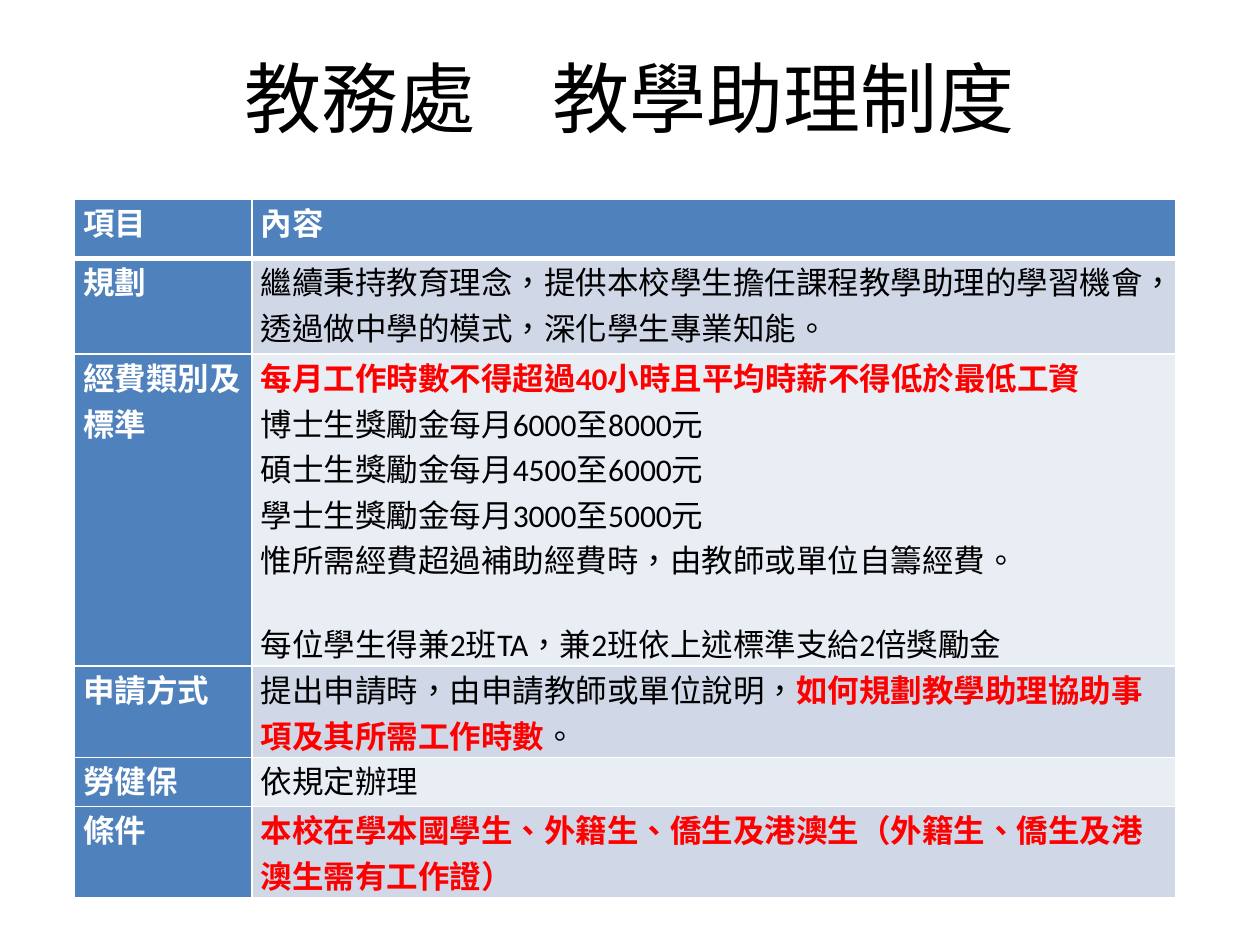
from lxml.etree import SubElement
from pptx import Presentation
from pptx.dml.color import RGBColor
from pptx.enum.lang import MSO_LANGUAGE_ID as Language
from pptx.enum.text import MSO_ANCHOR as Anchor, PP_ALIGN as Align
from pptx.oxml import parse_xml
from pptx.oxml.ns import nsdecls, qn
from pptx.util import Inches, Pt

BLACK = RGBColor(0x00, 0x00, 0x00)
WHITE = RGBColor(0xFF, 0xFF, 0xFF)
RED = RGBColor(0xFF, 0x00, 0x00)
BLUE = RGBColor(0x4F, 0x81, 0xBD)
BANDS = (RGBColor(0xE9, 0xED, 0xF4), RGBColor(0xD0, 0xD8, 0xE8))

# Paragraphs are lists of (text, is_key_point) runs
HEADER = ("項目", "內容")
ROWS = [
    ("規劃", [[("繼續秉持教育理念，提供本校學生擔任課程教學助理的學習機會，"
               "透過做中學的模式，深化學生專業知能。", False)]]),
    ("經費類別及標準", [
        [("每月工作時數不得超過40小時且平均時薪不得低於最低工資", True)],
        [("博士生獎勵金每月6000至8000元", False)],
        [("碩士生獎勵金每月4500至6000元", False)],
        [("學士生獎勵金每月3000至5000元", False)],
        [("惟所需經費超過補助經費時，由教師或單位自籌經費。", False)],
        [("每位學生得兼2班TA，兼2班依上述標準支給2倍獎勵金", False)]]),
    ("申請方式", [[("提出申請時，由申請教師或單位說明，", False),
                 ("如何規劃教學助理協助事項及其所需工作時數", True),
                 ("。", False)]]),
    ("勞健保", [[("依規定辦理", False)]]),
    ("條件", [[("本校在學本國學生、外籍生、僑生及港澳生"
               "（外籍生、僑生及港澳生需有工作證）", True)]]),
]
COLUMN_WIDTHS = (1.41, 7.33)
ROW_HEIGHTS = (0.47, 0.76, 2.08, 0.58, 0.39, 0.58)
NOTE_GAP = 22  # points above the closing note on fees


class SlideBuilder:
    """Holds the text style and the current slide."""

    title_font, title_size = "Noto Sans CJK SC", 44
    body_font, body_size = "Calibri", 18

    def __init__(self, presentation):
        self.slide = presentation.slides.add_slide(presentation.slide_layouts[5])

    def format_run(self, run, font, size, color, bold=False):
        run.font.name, run.font.size = font, Pt(size)
        run.font.bold, run.font.color.rgb = bold, color
        run.font.language_id = Language.TRADITIONAL_CHINESE

    def title(self, text, left, top, width, height):
        shape = self.slide.shapes.title
        shape.left, shape.top = Inches(left), Inches(top)
        shape.width, shape.height = Inches(width), Inches(height)
        shape.text_frame.text = text
        shape.text_frame.vertical_anchor = Anchor.MIDDLE
        paragraph = shape.text_frame.paragraphs[0]
        paragraph.alignment = Align.CENTER
        self.format_run(paragraph.runs[0], self.title_font, self.title_size, BLACK)

    def table(self, left, top, widths, heights):
        frame = self.slide.shapes.add_table(
            len(heights), len(widths), Inches(left), Inches(top),
            Inches(sum(widths)), Inches(sum(heights)))
        for column, width in zip(frame.table.columns, widths):
            column.width = Inches(width)
        for row, height in zip(frame.table.rows, heights):
            row.height = Inches(height)
        return frame.table

    def borders(self, cell, top, bottom):
        properties = cell._tc.get_or_add_tcPr()
        sides = (("lnL", 1), ("lnR", 1), ("lnT", top), ("lnB", bottom))
        for position, (side, width) in enumerate(sides):
            line = parse_xml(f'<a:{side} {nsdecls("a")} w="{Pt(width)}"/>')
            fill = SubElement(line, qn("a:solidFill"))
            SubElement(fill, qn("a:srgbClr"), val=str(WHITE))
            properties.insert(position, line)

    def cell(self, cell, fill, paragraphs, color, bold=False, top=1, bottom=1):
        cell.margin_left = cell.margin_right = Inches(0.07)
        cell.margin_top = cell.margin_bottom = 0
        cell.fill.solid()
        cell.fill.fore_color.rgb = fill
        self.borders(cell, top, bottom)
        text_frame = cell.text_frame
        for index, runs in enumerate(paragraphs):
            paragraph = text_frame.add_paragraph() if index else text_frame.paragraphs[0]
            for text, key_point in runs:
                run = paragraph.add_run()
                run.text = text
                self.format_run(run, self.body_font, self.body_size,
                                RED if key_point else color, bold or key_point)

    def label(self, cell, text, **edges):
        self.cell(cell, BLUE, [[(text, False)]], WHITE, True, **edges)


def main():
    presentation = Presentation()
    presentation.slide_width, presentation.slide_height = Inches(10), Inches(7.5)
    builder = SlideBuilder(presentation)

    # Title
    builder.title("教務處　教學助理制度", 0.5, 0.14, 9, 1.25)

    # Table header
    table = builder.table(0.59, 1.58, COLUMN_WIDTHS, ROW_HEIGHTS)
    for column, text in enumerate(HEADER):
        builder.label(table.cell(0, column), text, bottom=3)

    # Table rows, in alternating bands
    for row, (name, paragraphs) in enumerate(ROWS, start=1):
        top = 3 if row == 1 else 1
        builder.label(table.cell(row, 0), name, top=top)
        builder.cell(table.cell(row, 1), BANDS[row % 2], paragraphs, BLACK, top=top)

    # Set the closing note on fees apart
    table.cell(2, 1).text_frame.paragraphs[-1].space_before = Pt(NOTE_GAP)

    presentation.save("out.pptx")


if __name__ == "__main__":
    main()
